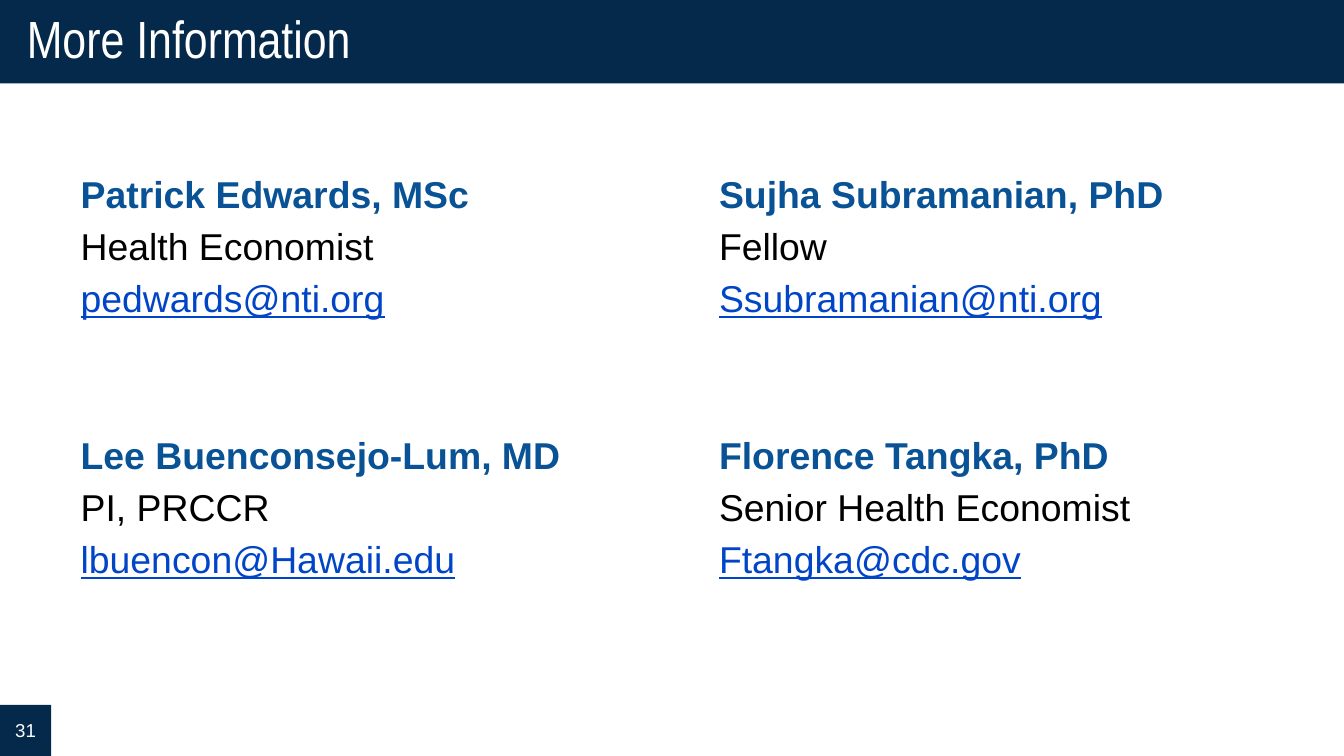
from dataclasses import dataclass

from lxml import etree
from pptx import Presentation
from pptx.dml.color import RGBColor
from pptx.enum.shapes import MSO_SHAPE
from pptx.enum.text import MSO_ANCHOR, PP_ALIGN
from pptx.oxml.ns import qn
from pptx.util import Inches, Pt

RECT = MSO_SHAPE.RECTANGLE
MIDDLE = MSO_ANCHOR.MIDDLE
LEFT, CENTER = PP_ALIGN.LEFT, PP_ALIGN.CENTER
TWO_COLUMNS = 3
WIDTH = 10
HEIGHT = WIDTH * 9 / 16


@dataclass(frozen=True)
class Theme:
    navy: str = "04294A"
    blue: str = "085295"
    link: str = "0045C7"
    black: str = "000000"
    white: str = "FFFFFF"
    font: str = "Arial"
    narrow: str = "Arial Narrow"
    title: int = 28
    body: int = 20
    page: int = 10
    gap: int = 4
    break_gap: int = 60


def write(para, text, font, size, color, bold=False, underline=False,
          align=LEFT, before=None, spacing=None):
    para.alignment = align
    if before is not None:
        para.space_before = Pt(before)
    if spacing is not None:
        para.line_spacing = spacing
    run = para.add_run()
    run.text = text
    run.font.name = font
    run.font.size = Pt(size)
    run.font.bold = bold
    run.font.underline = underline
    run.font.color.rgb = RGBColor.from_string(color)


def place(shape, left, top, width, height):
    shape.left, shape.top = Inches(left), Inches(top)
    shape.width, shape.height = Inches(width), Inches(height)


def paint(shape, color):
    shape.fill.solid()
    shape.fill.fore_color.rgb = RGBColor.from_string(color)
    shape.line.fill.background()


def clear_bullet(para):
    props = para._p.get_or_add_pPr()
    props.set("marL", "0")
    props.set("indent", "0")
    etree.SubElement(props, qn("a:buNone"))


class Deck:
    """Holds the theme and the slide being built."""

    def __init__(self, theme, slide):
        self.theme = theme
        self.slide = slide

    def title(self, text):
        look = self.theme
        bar = self.slide.shapes.title
        place(bar, 0, 0, WIDTH, 0.62)
        paint(bar, look.navy)
        frame = bar.text_frame
        frame.vertical_anchor = MIDDLE
        frame.margin_left = frame.margin_right = Inches(0.2)
        frame.margin_top = frame.margin_bottom = Inches(0.1)
        write(frame.paragraphs[0], text, look.narrow, look.title, look.white,
              spacing=0.9)

    def column(self, index, left, people):
        look = self.theme
        body = self.slide.placeholders[index]
        place(body, left, 1.22, 4.25, 3.83)
        frame = body.text_frame
        para = frame.paragraphs[0]
        for rank, (name, role, mail) in enumerate(people):
            lines = (
                (name, {"color": look.blue, "bold": True,
                        "before": look.break_gap if rank else look.gap}),
                (role, {"color": look.black, "before": look.gap}),
                (mail, {"color": look.link, "underline": True,
                        "before": look.gap}),
            )
            for text, style in lines:
                para = para or frame.add_paragraph()
                write(para, text, look.font, look.body, **style)
                clear_bullet(para)
                para = None

    def page(self, number):
        look = self.theme
        side = 0.38
        box = self.slide.shapes.add_shape(
            RECT, Inches(0), Inches(HEIGHT - side), Inches(side), Inches(side))
        box.shadow.inherit = False
        paint(box, look.navy)
        frame = box.text_frame
        frame.vertical_anchor = MIDDLE
        frame.word_wrap = False
        write(frame.paragraphs[0], number, look.font, look.page, look.white,
              align=CENTER)


def main():
    show = Presentation()
    show.slide_width, show.slide_height = Inches(WIDTH), Inches(HEIGHT)
    slide = show.slides.add_slide(show.slide_layouts[TWO_COLUMNS])
    deck = Deck(Theme(), slide)
    deck.title("More Information")
    deck.column(1, 0.5, [
        ("Patrick Edwards, MSc", "Health Economist", "pedwards@nti.org"),
        ("Lee Buenconsejo-Lum, MD", "PI, PRCCR", "lbuencon@Hawaii.edu"),
    ])
    deck.column(2, 5.25, [
        ("Sujha Subramanian, PhD", "Fellow", "Ssubramanian@nti.org"),
        ("Florence Tangka, PhD", "Senior Health Economist",
         "Ftangka@cdc.gov"),
    ])
    deck.page("31")
    show.save("out.pptx")


if __name__ == "__main__":
    main()
